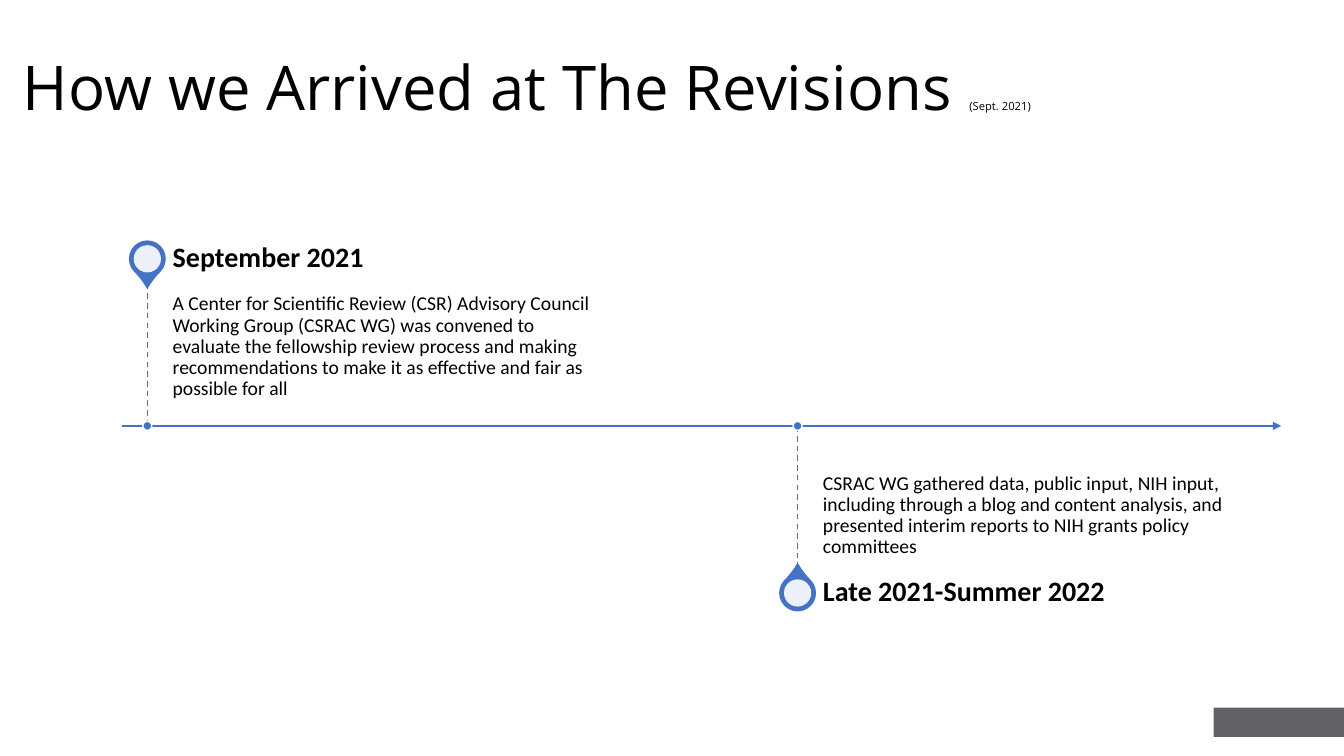
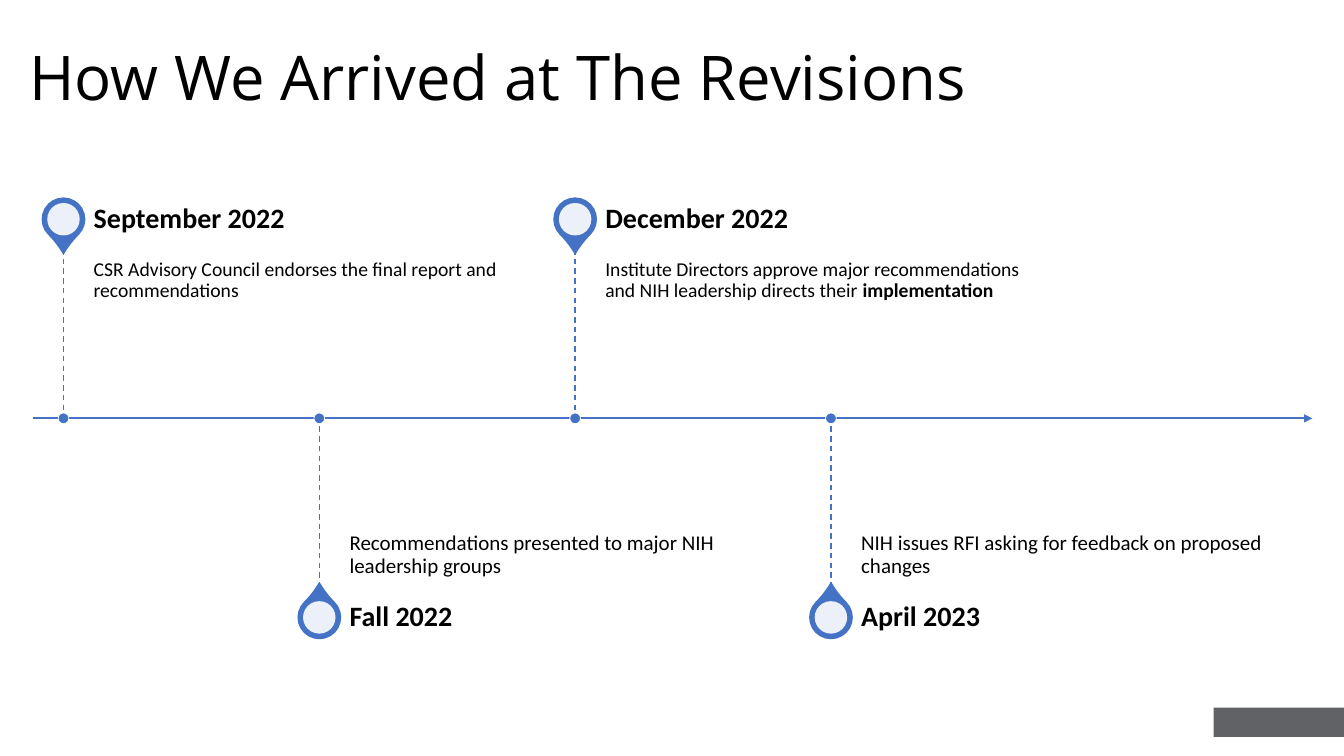
from pptx import Presentation
from pptx.dml.color import RGBColor
from pptx.enum.dml import MSO_LINE
from pptx.enum.shapes import MSO_CONNECTOR, MSO_SHAPE
from pptx.enum.text import MSO_ANCHOR
from pptx.oxml.ns import qn
from pptx.util import Emu, Inches, Pt
from lxml import etree

RECT, OVAL, DROP = MSO_SHAPE.RECTANGLE, MSO_SHAPE.OVAL, MSO_SHAPE.TEAR
LINE, DASH = MSO_CONNECTOR.STRAIGHT, MSO_LINE.DASH
TOP, MID, LOW = MSO_ANCHOR.TOP, MSO_ANCHOR.MIDDLE, MSO_ANCHOR.BOTTOM

BLUE = RGBColor(0x44, 0x72, 0xC4)
GREY = RGBColor(0x61, 0x62, 0x65)
WHITE = RGBColor(0xFF, 0xFF, 0xFF)
BLACK = RGBColor(0, 0, 0)

# Grid of 160 columns by 90 rows of square cells
COLS, ROWS = 160, 90
CELL = Inches(7.5) / ROWS

# Shared formats
TITLE = {"name": "Open Sans", "size": Pt(44)}
HEAD = {"name": "Calibri", "size": Pt(20), "bold": True}
BODY = {"name": "Calibri"}
BAND = (144.48, 84.24, 15.52, 3.48)

# Timeline parts as shares of the timeline's height
HEAD_H, PIN, HOLE, DOT, GAP = 0.13, 0.0925, 0.071, 0.0235, 0.066


def emu(*cells):
    return [Emu(round(c * CELL)) for c in cells]


def assign(item, values):
    for key, value in values.items():
        setattr(item, key, value)


def shape(slide, kind, box, fill, edge=None, weight=1):
    item = slide.shapes.add_shape(kind, *emu(*box))
    item.shadow.inherit = False
    item.fill.solid()
    item.fill.fore_color.rgb = fill
    if edge is None:
        item.line.fill.background()
    else:
        item.line.color.rgb = edge
        item.line.width = Pt(weight)
    return item


def disc(slide, kind, x, y, size, *style):
    """Place a round shape by its centre."""
    return shape(slide, kind, (x - size / 2, y - size / 2, size, size), *style)


def line(slide, ends, weight, dash=None, arrow=False):
    item = slide.shapes.add_connector(LINE, *emu(*ends))
    item.line.color.rgb = BLUE
    item.line.width = Pt(weight)
    if dash:
        item.line.dash_style = dash
    props = item._element.spPr
    if arrow:
        etree.SubElement(props.find(qn("a:ln")), qn("a:tailEnd"), type="triangle")
    etree.SubElement(props, qn("a:effectLst"))


def text(slide, box, runs, anchor, insets):
    """Write runs, each a pair of wording and font values."""
    frame = slide.shapes.add_textbox(*emu(*box)).text_frame
    sides = ("margin_left", "margin_top", "margin_right", "margin_bottom")
    assign(frame, {"word_wrap": True, "vertical_anchor": anchor})
    assign(frame, dict(zip(sides, map(Inches, insets))))
    para = frame.paragraphs[0]
    para.line_spacing = 0.9
    for words, style in runs:
        run = para.add_run()
        run.text = words
        assign(run.font, style)
        run.font.color.rgb = BLACK


def base(deck, left, top, runs):
    """Start a slide with its title and footer band."""
    slide = deck.slides.add_slide(deck.slide_layouts[6])
    shape(slide, RECT, BAND, GREY)
    text(slide, (left, top, 138, 17.4), runs, MID, (0.1, 0.05, 0.1, 0.05))
    return slide


def event(slide, box, x, wide, above, edge, item):
    """Draw one event; box is the timeline's, x is the stem."""
    _, top, _, high = box
    title, size, *parts = item
    axis, head = top + high / 2, high * HEAD_H
    stem = high / 2 - head
    tip = axis - stem if above else axis + stem
    edge_y = top if above else tip
    mid = edge_y + head / 2

    # Pin
    drop = disc(slide, DROP, x, mid, high * PIN, BLUE, BLUE)
    drop.adjustments[0] = 1.15
    drop.rotation = 135 if above else 315
    hole = disc(slide, OVAL, x, mid, high * HOLE, WHITE)
    tint = hole._element.spPr.find(qn("a:solidFill"))[0]
    etree.SubElement(tint, qn("a:alpha"), val="90000")

    # Wording
    left = x + high * GAP
    runs = [(words, {**BODY, "size": Pt(size), "bold": bold})
            for words, bold in parts]
    text(slide, (left, min(tip, axis), wide, stem), runs,
         TOP if above else LOW,
         (0, 0.1, 0, 0.15) if above else (0, 0.15, 0, 0.1))
    text(slide, (left, edge_y, wide, head), [(title, HEAD)], MID, (0, 0, 0.14, 0))

    # Stem and dot
    line(slide, (x, tip, x, axis), 1, DASH)
    disc(slide, OVAL, x, axis, high * DOT, BLUE, WHITE, edge)


def timeline(slide, box, step, wide, edge, items):
    """Alternate events above and below; step and wide are shares of the width."""
    left, top, width, high = box
    axis = top + high / 2
    line(slide, (left, axis, left + width, axis), 1.5, arrow=True)
    for i, item in enumerate(items):
        x = left + high * GAP + i * step * width
        event(slide, box, x, wide * width, i % 2 == 0, edge, item)


# Each event: title, body size, then (wording, bold) parts
EARLY = [
    ("September 2021", 14,
     ("A Center for Scientific Review (CSR) Advisory Council Working Group "
      "(CSRAC WG) was convened to evaluate the fellowship review process and "
      "making recommendations to make it as effective and fair as possible "
      "for all", False)),
    ("Late 2021-Summer 2022", 14,
     ("CSRAC WG gathered data, public input, NIH input, including through a "
      "blog and content analysis, and presented interim reports to NIH grants "
      "policy committees", False)),
]
LATE = [
    ("September 2022", 14,
     ("CSR Advisory Council endorses the final report and recommendations", False)),
    ("Fall 2022", 15,
     ("Recommendations presented to major NIH leadership groups", False)),
    ("December 2022", 14,
     ("Institute Directors approve major recommendations and NIH leadership "
      "directs their ", False),
     ("implementation", True)),
    ("April 2023", 15,
     ("NIH issues RFI asking for feedback on proposed changes", False)),
]


def main():
    deck = Presentation()
    deck.slide_width, deck.slide_height = emu(COLS, ROWS)

    first = base(deck, 1.56, 2.04, [
        ("How we Arrived at The Revisions ", TITLE),
        ("(Sept. 2021)", {**TITLE, "size": Pt(8)})])
    timeline(first, (14.52, 27.84, 138, 45.72), 0.561, 0.363, 1, EARLY)

    second = base(deck, 2.28, 0.84, [("How We Arrived at The Revisions", TITLE)])
    timeline(second, (3.96, 22.56, 152.28, 54.48), 0.2, 0.333, 0.5, LATE)

    deck.save("out.pptx")


if __name__ == "__main__":
    main()
